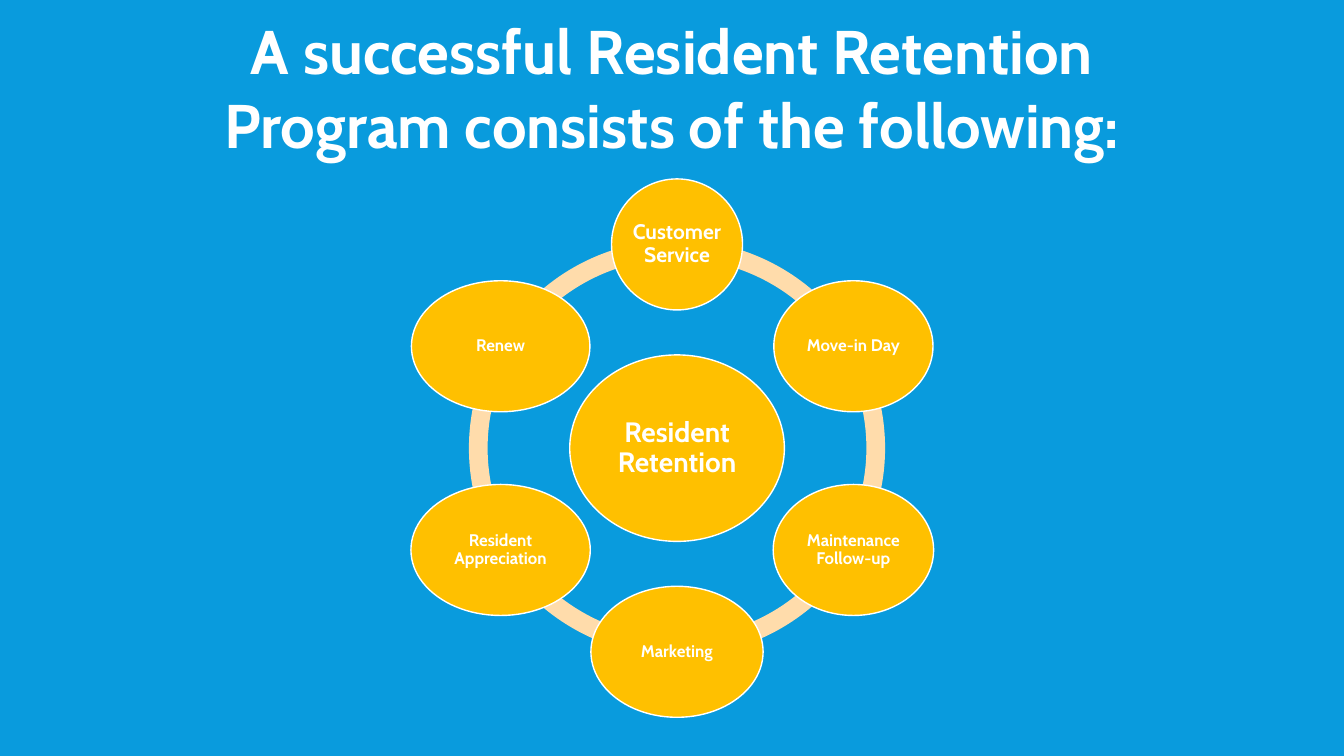
from math import cos, radians, sin

from pptx import Presentation
from pptx.dml.color import RGBColor
from pptx.enum.shapes import MSO_SHAPE
from pptx.enum.text import MSO_ANCHOR, PP_ALIGN
from pptx.util import Inches, Pt

ARC, OVAL = MSO_SHAPE.BLOCK_ARC, MSO_SHAPE.OVAL
TOP, MIDDLE = MSO_ANCHOR.TOP, MSO_ANCHOR.MIDDLE
CENTER = PP_ALIGN.CENTER

BLUE = RGBColor(0x09, 0x9B, 0xDD)
GOLD = RGBColor(0xFF, 0xC0, 0x00)
PEACH = RGBColor(0xFF, 0xDC, 0xAB)
WHITE = RGBColor(0xFF, 0xFF, 0xFF)

FONT = "Cabin"
COLS, ROWS = 32, 18

# Wheel, in columns and rows
HUB = (16.12, 10.67)
RADIUS = 4.85
RING = 9.91
NODE_TALL = 3.12
STEP = 60
# Label, width and text size, clockwise from the top
NODES = [
    ("Customer Service", 3.12, 15),
    ("Move-in Day", 3.79, 12),
    ("Maintenance Follow-up", 3.82, 12),
    ("Marketing", 4.1, 12),
    ("Resident Appreciation", 4.27, 12),
    ("Renew", 4.25, 12),
]


def write(frame, text, size, anchor=MIDDLE, inset=None, spacing=1.0):
    frame.word_wrap = True
    frame.vertical_anchor = anchor
    if inset is not None:
        frame.margin_left = frame.margin_right = Inches(inset)
        frame.margin_top = frame.margin_bottom = Inches(inset)
    line = frame.paragraphs[0]
    line.alignment = CENTER
    line.line_spacing = spacing
    run = line.add_run()
    run.text = text
    run.font.name = FONT
    run.font.size = Pt(size)
    run.font.bold = True
    run.font.color.rgb = WHITE


class Board:
    def __init__(self, deck):
        self.col = deck.slide_width / COLS
        self.row = deck.slide_height / ROWS
        self.slide = deck.slides.add_slide(deck.slide_layouts[6])
        back = self.slide.background.fill
        back.solid()
        back.fore_color.rgb = BLUE

    def box(self, left, top, wide, tall):
        return (round(left * self.col), round(top * self.row),
                round(wide * self.col), round(tall * self.row))

    def title(self, text, left, top, wide, tall):
        area = self.slide.shapes.add_textbox(*self.box(left, top, wide, tall))
        write(area.text_frame, text, 44, anchor=TOP)

    def shape(self, kind, mid, wide, tall, color):
        x, y = mid
        place = self.box(x - wide / 2, y - tall / 2, wide, tall)
        item = self.slide.shapes.add_shape(kind, *place)
        item.shadow.inherit = False
        item.fill.solid()
        item.fill.fore_color.rgb = color
        item.line.fill.background()
        return item

    def arc(self, start):
        item = self.shape(ARC, HUB, RING, RING, PEACH)
        # Angles are stored in units of 1/0.6 degree
        item.adjustments[0] = start * 0.6
        item.adjustments[1] = (start + STEP) % 360 * 0.6
        item.adjustments[2] = 0.045

    def oval(self, text, mid, wide, tall, size, inset=0.02):
        item = self.shape(OVAL, mid, wide, tall, GOLD)
        item.line.color.rgb = WHITE
        item.line.width = Pt(1)
        write(item.text_frame, text, size, inset=inset, spacing=0.9)


def main():
    deck = Presentation()
    deck.slide_width, deck.slide_height = Inches(13.33), Inches(7.5)
    board = Board(deck)

    # Title
    board.title("A successful Resident Retention Program consists of the following:",
                4.3, 0.19, 23.4, 4.61)

    # Ring of arcs
    for i in range(len(NODES)):
        board.arc(30 + i * STEP)

    # Hub and the nodes around it
    board.oval("Resident Retention", HUB, 5.11, 4.44, 20, inset=0.03)
    for i, (text, wide, size) in enumerate(NODES):
        turn = radians(i * STEP)
        mid = (HUB[0] + RADIUS * sin(turn), HUB[1] - RADIUS * cos(turn))
        board.oval(text, mid, wide, NODE_TALL, size)

    deck.save("out.pptx")


if __name__ == "__main__":
    main()
